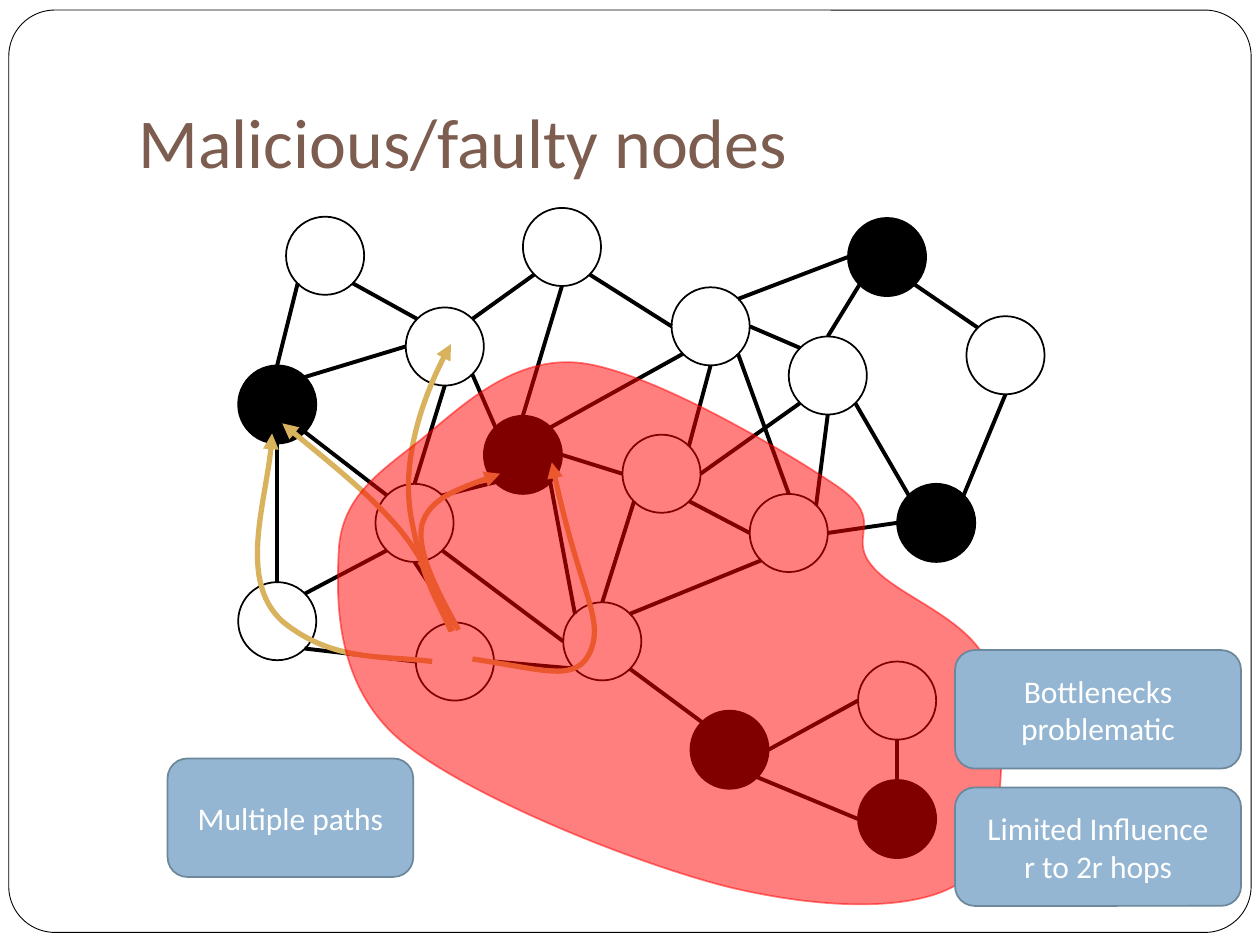
from dataclasses import dataclass

from lxml.etree import SubElement
from pptx import Presentation
from pptx.dml.color import RGBColor
from pptx.enum.shapes import MSO_CONNECTOR, MSO_SHAPE
from pptx.enum.text import MSO_ANCHOR, PP_ALIGN
from pptx.oxml.ns import qn
from pptx.util import Inches, Pt

FONT = "Calibri"
COLORS = {
    "paper": "FFFFFF",
    "ink": "000000",
    "title": "7C5D50",
    "label": "94B6D2",
    "label_edge": "6D879B",
    "route": "D8B25C",
    "zone": "FF0000",
}
DIAMETER = 0.62

# Points on a node's rim, as fractions of its diameter
NEAR, FAR = 0.15, 0.85
RIM = {
    "n": (0.5, 0), "ne": (FAR, NEAR), "e": (1, 0.5), "se": (FAR, FAR),
    "s": (0.5, 1), "sw": (NEAR, FAR), "w": (0, 0.5), "nw": (NEAR, NEAR),
}


@dataclass
class Node:
    left: float
    top: float
    faulty: bool = False

    def rim(self, side: str) -> tuple[float, float]:
        across, down = RIM[side]
        return self.left + across * DIAMETER, self.top + down * DIAMETER


@dataclass
class Label:
    left: float
    top: float
    width: float
    text: str


NODES = {
    "A": Node(2.27, 1.72), "B": Node(4.15, 1.65), "C": Node(6.73, 1.73, True),
    "D": Node(5.33, 2.28), "E": Node(3.22, 2.44), "F": Node(6.26, 2.67),
    "G": Node(7.67, 2.51), "H": Node(1.89, 2.9, True), "I": Node(3.84, 3.3, True),
    "J": Node(4.94, 3.45), "K": Node(2.98, 3.84), "L": Node(5.95, 3.92),
    "M": Node(7.12, 3.84, True), "N": Node(1.89, 4.62), "O": Node(3.3, 4.94),
    "P": Node(4.47, 4.78), "Q": Node(6.81, 5.25), "R": Node(5.48, 5.64, True),
    "S": Node(6.81, 6.19, True),
}

# Each link is "node.side node.side"
LINKS = [
    "I.e J.w", "D.e F.nw", "F.n C.sw", "B.se D.w", "J.ne D.s", "E.se I.nw",
    "I.ne D.sw", "J.se L.w", "B.s I.n", "E.ne B.sw", "D.se L.n", "F.s L.ne",
    "J.e F.sw", "D.ne C.w", "N.ne K.sw", "N.se O.w", "O.e P.sw", "K.s O.n",
    "E.s K.n", "K.se P.w", "N.n H.s", "H.se K.nw", "P.se R.nw", "P.ne L.sw",
    "P.n J.sw", "P.nw I.se", "K.ne I.sw", "H.ne E.w", "S.n Q.s", "E.nw A.se",
    "H.n A.sw", "S.w R.se", "R.e Q.w", "G.s M.ne", "C.se G.nw", "F.se M.nw",
    "L.e M.w",
]

# Bezier curves: a start point, then two control points and an end per segment
ROUTES = [
    [(3.43, 5.25), (3.06, 5.2), (2.64, 5.26), (2.24, 4.93),
     (1.89, 4.61), (2.14, 3.9), (2.16, 3.44)],
    [(3.75, 5.23), (4.35, 5.32), (4.58, 5.42), (4.69, 5.16),
     (4.79, 4.9), (4.59, 4.69), (4.38, 3.67)],
    [(3.64, 5), (3.47, 4.69), (3.3, 4.37), (3.35, 4.16),
     (3.41, 3.96), (3.69, 3.86), (3.97, 3.76)],
    [(3.59, 5.01), (3.49, 4.74), (3.39, 4.47), (3.17, 4.2),
     (2.94, 3.93), (2.59, 3.65), (2.24, 3.36)],
    [(3.58, 5.01), (3.42, 4.66), (3.36, 4.6), (3.27, 4.14),
     (3.18, 3.71), (3.35, 3.13), (3.58, 2.73)],
]
ZONE = [
    (5.78, 7.04), (6.53, 7.22), (7.32, 7.25), (7.67, 6.97),
    (8.02, 6.68), (7.98, 5.73), (7.86, 5.32), (7.73, 4.91), (7.12, 4.74), (6.92, 4.49),
    (6.72, 4.25), (7.04, 4.14), (6.66, 3.87), (6.27, 3.6), (5.16, 2.94), (4.6, 2.88),
    (4.04, 2.82), (3.61, 3.28), (3.29, 3.53), (2.98, 3.77), (2.72, 3.96), (2.69, 4.35),
    (2.67, 4.74), (2.65, 5.41), (3.16, 5.86), (3.68, 6.31), (5.03, 6.85), (5.78, 7.04),
]
PATHS_LABEL = Label(1.33, 6.02, 1.95, "Multiple paths")
SIDE_LABELS = [
    Label(7.58, 5.16, 2.27, "Bottlenecks\nproblematic"),
    Label(7.58, 6.25, 2.27, "Limited Influence\nr to 2r hops"),
]


def color(name: str) -> RGBColor:
    return RGBColor.from_string(COLORS[name])


def set_line(shape, name: str, width: float) -> None:
    shape.line.color.rgb = color(name)
    shape.line.width = Pt(width)


def add_filled(page, kind, box: tuple, fill: str, edge: str, width: float = 1):
    shape = page.shapes.add_shape(kind, *(Inches(value) for value in box))
    shape.shadow.inherit = False
    shape.fill.solid()
    shape.fill.fore_color.rgb = color(fill)
    set_line(shape, edge, width)
    return shape


def format_text(frame, size: int, name: str, align) -> None:
    for para in frame.paragraphs:
        para.alignment = align
        for span in para.runs:
            span.font.size = Pt(size)
            span.font.name = FONT
            span.font.color.rgb = color(name)


def add_node(page, node: Node) -> None:
    add_filled(page, MSO_SHAPE.FLOWCHART_CONNECTOR,
               (node.left, node.top, DIAMETER, DIAMETER),
               "ink" if node.faulty else "paper", "ink")


def add_link(page, link: str) -> None:
    ends = [NODES[name].rim(side) for name, side in (end.split(".") for end in link.split())]
    line = page.shapes.add_connector(
        MSO_CONNECTOR.STRAIGHT, *(Inches(value) for point in ends for value in point))
    set_line(line, "ink", 2.25)
    SubElement(line.element.spPr, qn("a:effectLst"))


def add_curve(page, points: list, closed: bool = False):
    start, *rest = [(Inches(x), Inches(y)) for x, y in points]
    builder = page.shapes.build_freeform(*start)
    builder.add_line_segments(rest, close=closed)
    shape = builder.convert_to_shape()
    shape.shadow.inherit = False
    # Join each three straight steps into one cubic segment
    outline = next(shape.element.iter(qn("a:path")))
    steps = outline.findall(qn("a:lnTo"))
    for first in range(0, len(steps), 3):
        curve = SubElement(outline, qn("a:cubicBezTo"))
        steps[first].addprevious(curve)
        for step in steps[first:first + 3]:
            curve.append(step[0])
            outline.remove(step)
    return shape


def add_route(page, points: list) -> None:
    route = add_curve(page, points)
    route.fill.background()
    set_line(route, "route", 3)
    SubElement(next(route.element.iter(qn("a:ln"))), qn("a:tailEnd"), type="triangle")


def add_zone(page) -> None:
    zone = add_curve(page, ZONE, closed=True)
    zone.fill.solid()
    zone.fill.fore_color.rgb = color("zone")
    set_line(zone, "zone", 1)
    for tint in zone.element.spPr.iter(qn("a:srgbClr")):
        SubElement(tint, qn("a:alpha"), val="50000")


def add_label(page, label: Label) -> None:
    box = add_filled(page, MSO_SHAPE.ROUNDED_RECTANGLE,
                     (label.left, label.top, label.width, 0.94), "label", "label_edge")
    box.text_frame.text = label.text
    box.text_frame.vertical_anchor = MSO_ANCHOR.MIDDLE
    format_text(box.text_frame, 18, "paper", PP_ALIGN.CENTER)


def main() -> None:
    deck = Presentation()
    deck.slide_width, deck.slide_height = Inches(10), Inches(7.5)
    page = deck.slides.add_slide(deck.slide_layouts[5])

    # Title, with the page frame behind it
    title = page.shapes.title
    title.left, title.top, title.width, title.height = map(Inches, (1, 0.3, 8.5, 1.25))
    title.text_frame.text = "Malicious/faulty nodes"
    title.text_frame.vertical_anchor = MSO_ANCHOR.BOTTOM
    title.text_frame.margin_bottom = Inches(0.1)
    format_text(title.text_frame, 40, "title", PP_ALIGN.LEFT)
    frame = add_filled(page, MSO_SHAPE.ROUNDED_RECTANGLE,
                       (0.07, 0.08, 9.86, 7.32), "paper", "ink", 0.5)
    frame.adjustments[0] = 0.05
    title.element.addprevious(frame.element)

    # Network
    for node in NODES.values():
        add_node(page, node)
    for link in LINKS:
        add_link(page, link)

    # Routes, zone of influence and labels
    add_label(page, PATHS_LABEL)
    for points in ROUTES:
        add_route(page, points)
    add_zone(page)
    for label in SIDE_LABELS:
        add_label(page, label)

    deck.save("out.pptx")


if __name__ == "__main__":
    main()
